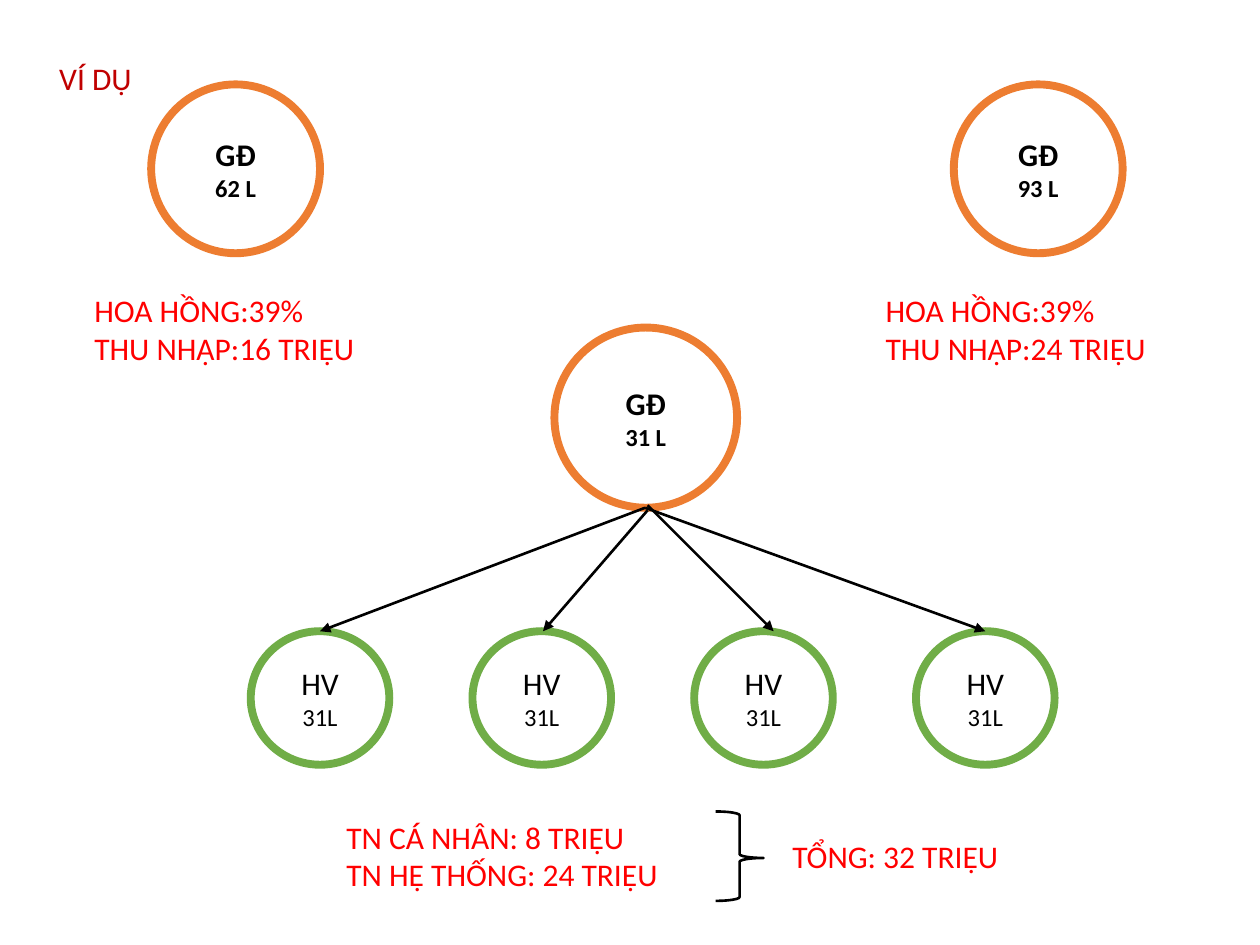
from lxml.etree import SubElement
from pptx import Presentation
from pptx.dml.color import RGBColor
from pptx.enum.shapes import MSO_CONNECTOR, MSO_SHAPE
from pptx.enum.text import MSO_ANCHOR, MSO_AUTO_SIZE, PP_ALIGN
from pptx.oxml.ns import qn
from pptx.util import Pt

PX_PER_INCH = 100
SCALE = 914400 // PX_PER_INCH
FONT = "Calibri"
COLORS = {
    "white": "FFFFFF",
    "black": "000000",
    "director": "ED7D31",
    "member": "70AD47",
    "note": "FF0000",
    "title": "C00000",
}


def px(*lengths):
    return [length * SCALE for length in lengths]


def color(name):
    return RGBColor.from_string(COLORS[name])


def set_line(shape, name, width):
    shape.line.color.rgb = color(name)
    shape.line.width = Pt(width)


def write(frame, lines, sizes, name, bold=False, align=PP_ALIGN.LEFT):
    frame.text = "\n".join(lines)
    for para, size in zip(frame.paragraphs, sizes):
        para.alignment = align
        for span in para.runs:
            span.font.name = FONT
            span.font.size = Pt(size)
            span.font.bold = bold
            span.font.color.rgb = color(name)


def set_title(slide, text, bounds):
    title = slide.shapes.title
    title.left, title.top, title.width, title.height = px(*bounds)
    write(title.text_frame, [text], [18], "title")
    title.text_frame.vertical_anchor = MSO_ANCHOR.TOP
    title.text_frame.auto_size = MSO_AUTO_SIZE.SHAPE_TO_FIT_TEXT


def add_circle(slide, bounds, lines, outline, bold):
    circle = slide.shapes.add_shape(MSO_SHAPE.FLOWCHART_CONNECTOR, *px(*bounds))
    circle.shadow.inherit = False
    circle.fill.solid()
    circle.fill.fore_color.rgb = color("white")
    set_line(circle, outline, 4.5)
    circle.text_frame.vertical_anchor = MSO_ANCHOR.MIDDLE
    write(circle.text_frame, lines, [18, 14], "black", bold, PP_ALIGN.CENTER)


def add_arrow(slide, start, end):
    arrow = slide.shapes.add_connector(MSO_CONNECTOR.STRAIGHT, *px(*start, *end))
    set_line(arrow, "black", 1.5)
    SubElement(arrow.line._get_or_add_ln(), qn("a:tailEnd"), type="triangle")
    SubElement(arrow._element.spPr, qn("a:effectLst"))


def add_note(slide, bounds, lines, wrap=False):
    box = slide.shapes.add_textbox(*px(*bounds))
    box.text_frame.word_wrap = wrap
    box.text_frame.auto_size = MSO_AUTO_SIZE.SHAPE_TO_FIT_TEXT
    write(box.text_frame, lines, [18] * len(lines), "note")


def add_brace(slide, bounds):
    brace = slide.shapes.add_shape(MSO_SHAPE.RIGHT_BRACE, *px(*bounds))
    brace.shadow.inherit = False
    brace.fill.background()
    set_line(brace, "black", 1.5)
    brace.adjustments[0] = 0.08
    brace.adjustments[1] = 0.52


def main():
    deck = Presentation()
    deck.slide_width, deck.slide_height = px(1000, 750)
    slide = deck.slides.add_slide(deck.slide_layouts.get_by_name("Title Only"))
    set_title(slide, "VÍ DỤ", (37, 42, 263, 40))

    directors = [
        ((120, 67, 134, 134), "62 L"),
        ((757, 67, 134, 134), "93 L"),
        ((440, 260, 145, 143), "31 L"),
    ]
    for bounds, volume in directors:
        add_circle(slide, bounds, ["GĐ", volume], "director", True)

    for column in range(4):
        bounds = (199 + 176 * column, 501, 110, 106)
        add_circle(slide, bounds, ["HV", "31L"], "member", False)

    arrows = [
        ((514, 401), 614),
        ((514, 405), 431),
        ((512, 403), 782),
        ((512, 403), 254),
    ]
    for start, end_x in arrows:
        add_arrow(slide, start, (end_x, 501))

    for left, income in [(65, 16), (693, 24)]:
        lines = ["HOA HỒNG:39%", f"THU NHẬP:{income} TRIỆU"]
        add_note(slide, (left, 226, 267, 71), lines)

    totals = ["TN CÁ NHÂN: 8 TRIỆU", "TN HỆ THỐNG: 24 TRIỆU"]
    add_note(slide, (265, 644, 319, 71), totals, wrap=True)
    add_brace(slide, (568, 644, 38, 71))
    add_note(slide, (619, 659, 217, 40), ["TỔNG: 32 TRIỆU"])

    deck.save("out.pptx")


if __name__ == "__main__":
    main()
